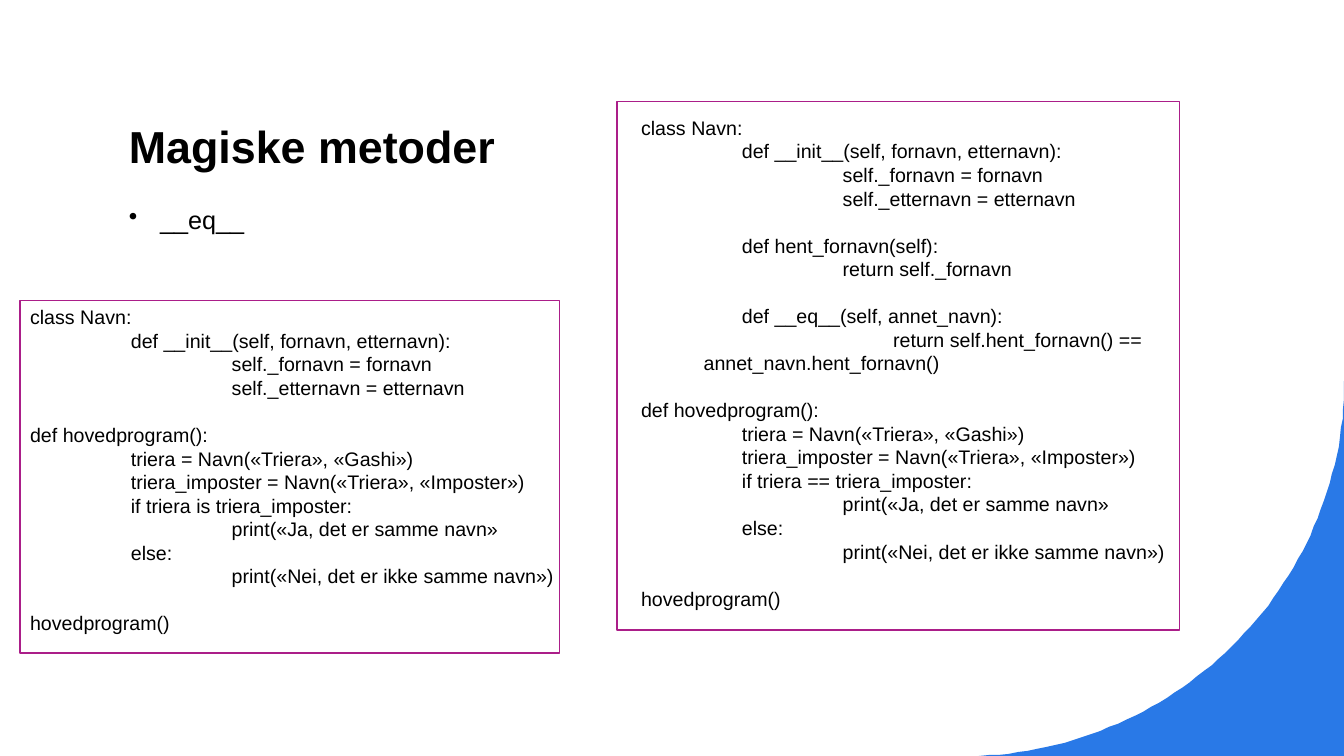
from dataclasses import dataclass

from lxml import etree
from pptx import Presentation
from pptx.dml.color import RGBColor
from pptx.enum.shapes import MSO_SHAPE
from pptx.enum.text import MSO_ANCHOR
from pptx.oxml.ns import qn
from pptx.util import Inches, Pt

RECTANGLE = MSO_SHAPE.RECTANGLE
TOP, BOTTOM = MSO_ANCHOR.TOP, MSO_ANCHOR.BOTTOM

# The grid has 100 cells to the inch; every box is (left, top, width, height) in cells.
CELL = Inches(0.01)
COLUMNS, ROWS = 1333, 750
TAB = 100


@dataclass(frozen=True)
class Theme:
    font: str = "Arial"
    ink: RGBColor = RGBColor(0x00, 0x00, 0x00)
    frame: RGBColor = RGBColor(0xAB, 0x1E, 0x89)
    corner: RGBColor = RGBColor(0x29, 0x79, 0xE7)
    title_size: int = 32
    body_size: int = 18
    code_size: int = 14
    code_line: float = 16.8


THEME = Theme()

TITLE = "Magiske metoder"
TITLE_BOX = (118, 79, 1088, 97)
BULLET = "__eq__"
BULLET_BOX = (118, 198, 186, 40)
BULLET_INDENT = 31

# Code blocks hold lines of (tab level, text).
CLASS_HEAD = [
    (0, "class Navn:"),
    (1, "def __init__(self, fornavn, etternavn):"),
    (2, "self._fornavn = fornavn"),
    (2, "self._etternavn = etternavn"),
]
METHODS = [
    [(1, "def hent_fornavn(self):"), (2, "return self._fornavn")],
    [
        (1, "def __eq__(self, annet_navn):"),
        (2.5, "return self.hent_fornavn() == annet_navn.hent_fornavn()"),
    ],
]
WRAPPED_LEVEL, WRAPPED_MARGIN = 2.5, 62


def main_program(comparison):
    return [
        (0, "def hovedprogram():"),
        (1, "triera = Navn(«Triera», «Gashi»)"),
        (1, "triera_imposter = Navn(«Triera», «Imposter»)"),
        (1, f"if triera {comparison} triera_imposter:"),
        (2, "print(«Ja, det er samme navn»"),
        (1, "else:"),
        (2, "print(«Nei, det er ikke samme navn»)"),
    ]


CALL = [(0, "hovedprogram()")]
LISTINGS = [
    {
        "text": (20, 298, 547, 340),
        "frame": (20, 298, 535, 350),
        "blocks": [CLASS_HEAD, main_program("is"), CALL],
    },
    {
        "text": (626, 110, 558, 505),
        "frame": (612, 101, 558, 524),
        "blocks": [CLASS_HEAD, *METHODS, main_program("=="), CALL],
    },
]

# Bezier curve of the blue corner, from the bottom edge to the right edge.
CORNER_CURVE = [(971, 750), (1167, 741), (1323, 587), (1333, 396)]
CORNER_STEPS = 60


def in_cells(box):
    return [value * CELL for value in box]


def curve_point(share):
    rest = 1 - share
    weights = (rest**3, 3 * rest**2 * share, 3 * rest * share**2, share**3)
    return tuple(
        sum(weight * point[axis] for weight, point in zip(weights, CORNER_CURVE))
        for axis in (0, 1)
    )


def add_corner(page):
    points = [curve_point(step / CORNER_STEPS) for step in range(CORNER_STEPS + 1)]
    builder = page.shapes.build_freeform(963, ROWS, scale=CELL)
    builder.add_line_segments(points + [(COLUMNS, 378), (COLUMNS, ROWS)], close=True)
    corner = builder.convert_to_shape()
    corner.shadow.inherit = False
    corner.fill.solid()
    corner.fill.fore_color.rgb = THEME.corner
    corner.line.fill.background()


def add_text_frame(page, box, anchor=TOP):
    frame = page.shapes.add_textbox(*in_cells(box)).text_frame
    frame.word_wrap = True
    frame.vertical_anchor = anchor
    return frame


def write(para, text, size, bold=False):
    para.text = text
    para.font.name = THEME.font
    para.font.size = Pt(size)
    para.font.bold = bold
    para.font.color.rgb = THEME.ink


def indent(para, margin, first_line=0):
    """Set the left margin and the first line's offset from it, in cells."""
    properties = para._p.get_or_add_pPr()
    properties.set("marL", str(int(margin * CELL)))
    properties.set("indent", str(int(first_line * CELL)))
    return properties


def add_title(page):
    para = add_text_frame(page, TITLE_BOX, BOTTOM).paragraphs[0]
    write(para, TITLE, THEME.title_size, bold=True)
    para.line_spacing = 1.1


def add_bullet(page):
    para = add_text_frame(page, BULLET_BOX).paragraphs[0]
    properties = indent(para, BULLET_INDENT, -BULLET_INDENT)
    mark = etree.Element(qn("a:buChar"), char="•")
    properties.insert(0, mark)
    write(para, BULLET, THEME.body_size)


def add_code(page, box, blocks):
    frame = add_text_frame(page, box)
    para = frame.paragraphs[0]
    for block_index, block in enumerate(blocks):
        for line_index, (level, text) in enumerate(block):
            if block_index or line_index:
                para = frame.add_paragraph()
            write(para, text, THEME.code_size)
            para.line_spacing = Pt(THEME.code_line)
            if block_index and not line_index:
                para.space_before = Pt(THEME.code_line)
            start = level * TAB
            margin = WRAPPED_MARGIN if level == WRAPPED_LEVEL else start
            indent(para, margin, start - margin)


def add_frame(page, box):
    frame = page.shapes.add_shape(RECTANGLE, *in_cells(box))
    frame.shadow.inherit = False
    frame.fill.background()
    frame.line.color.rgb = THEME.frame
    frame.line.width = Pt(1)


def main():
    deck = Presentation()
    deck.slide_width, deck.slide_height = COLUMNS * CELL, ROWS * CELL
    page = deck.slides.add_slide(deck.slide_layouts[6])
    add_corner(page)
    add_title(page)
    add_bullet(page)
    for listing in LISTINGS:
        add_code(page, listing["text"], listing["blocks"])
    for listing in LISTINGS:
        add_frame(page, listing["frame"])
    deck.save("out.pptx")


if __name__ == "__main__":
    main()
